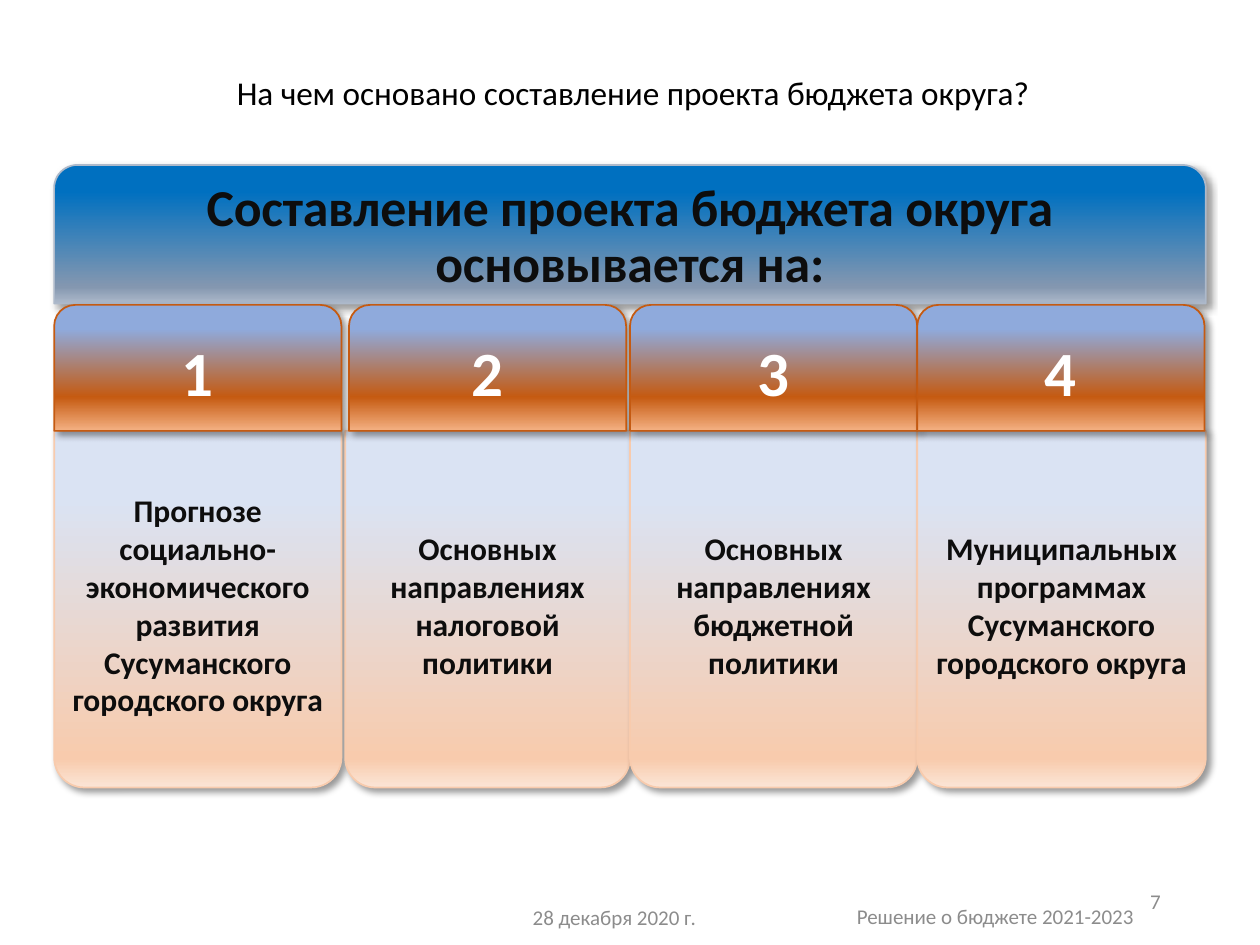
from lxml import etree
from pptx import Presentation
from pptx.dml.color import RGBColor
from pptx.enum.shapes import MSO_SHAPE
from pptx.enum.text import MSO_ANCHOR, PP_ALIGN
from pptx.oxml.ns import qn
from pptx.util import Inches, Pt

LEFT, MID, RIGHT = PP_ALIGN.LEFT, PP_ALIGN.CENTER, PP_ALIGN.RIGHT
MIDDLE = MSO_ANCHOR.MIDDLE
ROUND = MSO_SHAPE.ROUND_2_SAME_RECTANGLE

TITLE = "На чем основано составление проекта бюджета округа?"
HEAD = "Составление проекта бюджета округа основывается на:"
CARDS = [
    ("Прогнозе социально-экономического развития Сусуманского городского округа", 0.43, 2.28, 0.43, 2.28),
    ("Основных направлениях налоговой политики", 2.74, 2.26, 2.77, 2.2),
    ("Основных направлениях бюджетной политики", 5, 2.28, 5, 2.28),
    ("Муниципальных программах Сусуманского городского округа", 7.28, 2.29, 7.28, 2.28),
]
FOOT = [
    ("28 декабря 2020 г.", (4.13, 7.08, 2.5, 0.4), LEFT),
    ("Решение о бюджете 2021-2023", (6.65, 7.07, 2.5, 0.4), MID),
    ("7", (7.06, 6.95, 2.25, 0.4), RIGHT),
]
BLUE = [(19, "0070C0"), (88, "8497B0"), (100, "ADB9CA")]
PALE = [(19, "DAE3F3"), (92, "F8CBAD"), (100, "FBE5D6")]
RUST = [(19, "8FAADC"), (73, "C55A11"), (100, "F4B183")]

prs = Presentation()
prs.slide_width, prs.slide_height = Inches(10), Inches(7.5)
slide = prs.slides.add_slide(prs.slide_layouts[6])


def rgb(code):
    return RGBColor.from_string(code)


def add(root, tag, **attrs):
    return etree.SubElement(root, qn(tag), {k: str(v) for k, v in attrs.items()})


def tint(root, code, alpha=None):
    node = add(root, "a:srgbClr", val=code)
    if alpha:
        add(node, "a:alpha", val=alpha * 1000)


def cast(root):
    node = add(root, "a:outerShdw", blurRad=Pt(4), dist=Pt(3),
               dir=45 * 60000, algn="tl", rotWithShape=0)
    tint(node, "000000", 40)


def write(shape, text, size=12, color="8C8C8C", bold=False, align=MID,
          inset=None, lines=None, track=None):
    frame = shape.text_frame
    frame.word_wrap = True
    frame.vertical_anchor = MIDDLE
    if inset is not None:
        frame.margin_left = frame.margin_right = Inches(inset)
        frame.margin_top = frame.margin_bottom = Inches(inset)
    para = frame.paragraphs[0]
    para.alignment = align
    if lines:
        para.line_spacing = lines
    run = para.add_run()
    run.text = text
    font = run.font
    font.name, font.size, font.bold = "Calibri", Pt(size), bold
    font.color.rgb = rgb(color)
    if track:
        run._r.get_or_add_rPr().set("spc", str(track))
    return run


def label(text, box, **style):
    return write(slide.shapes.add_textbox(*map(Inches, box)), text, **style)


def panel(text, box, stops, edge, adjust=None, **style):
    shape = slide.shapes.add_shape(ROUND, *map(Inches, box))
    for i, value in enumerate(adjust or []):
        shape.adjustments[i] = value
    shape.fill.gradient()
    shape.fill.gradient_angle = 270
    ramp = shape._element.spPr.find(".//" + qn("a:gsLst"))
    for old in list(ramp):
        ramp.remove(old)
    for place, code in stops:
        tint(add(ramp, "a:gs", pos=place * 1000), code)
    shape.line.color.rgb = rgb(edge)
    shape.line.width = Pt(1)
    shape.shadow.inherit = False
    cast(shape._element.spPr.find(qn("a:effectLst")))
    write(shape, text, **style)


run = label(TITLE, (0.51, 0.52, 9.03, 0.47), size=19, color="000000", lines=0.9)
glow = etree.Element(qn("a:effectLst"))
cast(glow)
run._r.rPr.find(qn("a:solidFill")).addnext(glow)

panel(HEAD, (0.43, 1.31, 9.14, 1.1), BLUE, "ADB9CA",
      size=29.6, color="0D0D0D", bold=True, lines=0.9, track=-15)
for text, box, align in FOOT:
    label(text, box, align=align)
for text, left, width, _, _ in CARDS:
    panel(text, (left, 3.42, width, 2.83), PALE, "F8CBAD", adjust=(0, 0.104),
          size=18, color="0D0D0D", bold=True, inset=0)
for num, (_, _, _, left, width) in enumerate(CARDS, 1):
    panel(str(num), (left, 2.42, width, 1), RUST, "C55A11",
          size=36, color="FFFFFF", bold=True)

prs.save("out.pptx")
